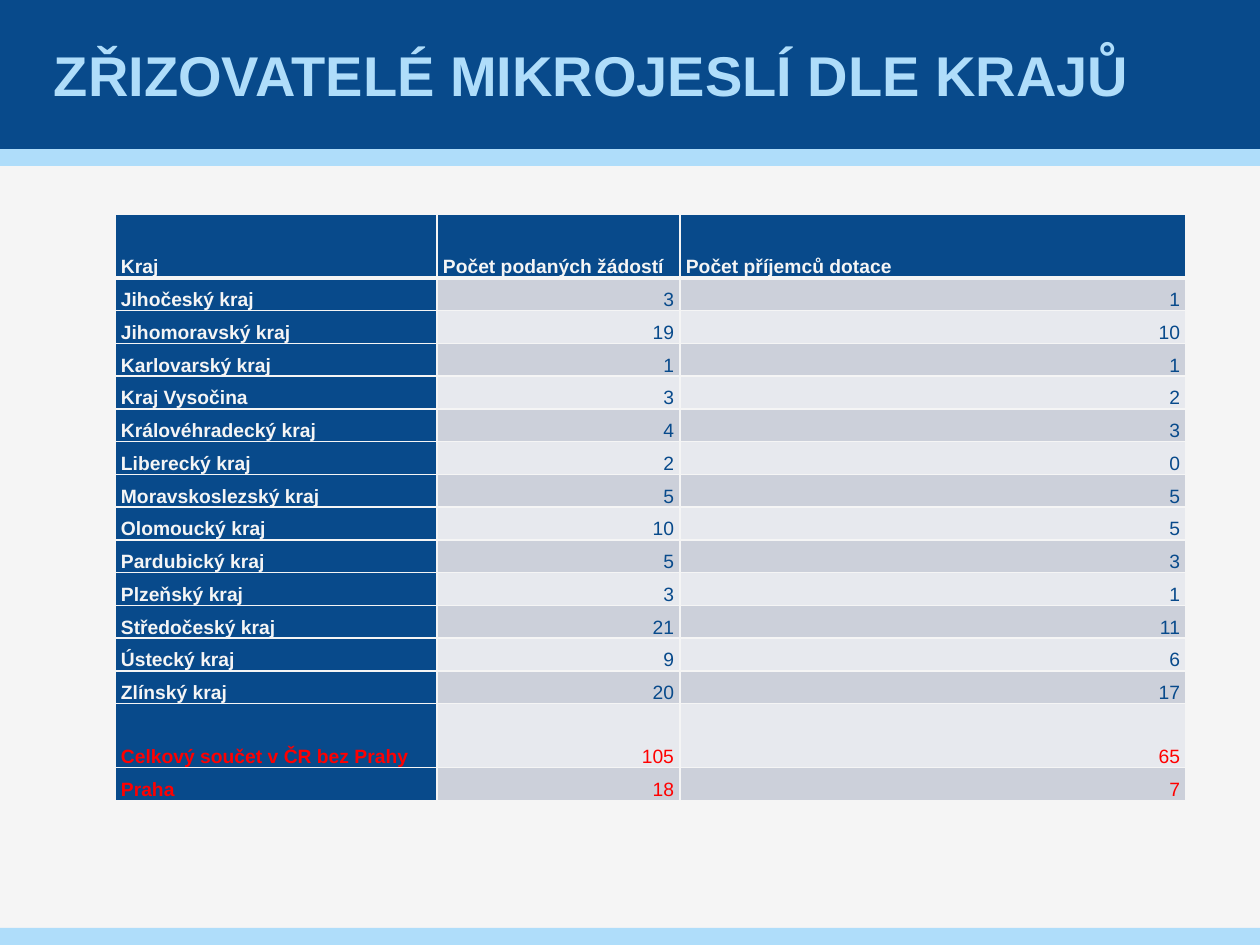
from lxml.etree import SubElement
from pptx import Presentation
from pptx.dml.color import RGBColor
from pptx.enum.shapes import MSO_SHAPE
from pptx.enum.text import MSO_ANCHOR, PP_ALIGN
from pptx.oxml.ns import qn
from pptx.util import Pt

COLORS = {
    "navy": "084A8B",
    "sky": "AFDDFA",
    "paper": "F5F5F5",
    "dark_band": "CCD0DA",
    "light_band": "E7E9EE",
    "total": "FF0000",
}
FONT = "Arial"
EMU_PER_PX = 914400 / 126

HEADINGS = ("Kraj", "Počet podaných žádostí", "Počet příjemců dotace")
REGIONS = [
    ("Jihočeský kraj", 3, 1),
    ("Jihomoravský kraj", 19, 10),
    ("Karlovarský kraj", 1, 1),
    ("Kraj Vysočina", 3, 2),
    ("Královéhradecký kraj", 4, 3),
    ("Liberecký kraj", 2, 0),
    ("Moravskoslezský kraj", 5, 5),
    ("Olomoucký kraj", 10, 5),
    ("Pardubický kraj", 5, 3),
    ("Plzeňský kraj", 3, 1),
    ("Středočeský kraj", 21, 11),
    ("Ústecký kraj", 9, 6),
    ("Zlínský kraj", 20, 17),
]
TOTALS = [("Celkový součet v ČR bez Prahy", 105, 65), ("Praha", 18, 7)]
COLUMN_WIDTHS = (322, 243, 506)
TALL_ROW = 64


def px(length):
    """Turn a length in px into EMU."""
    return round(length * EMU_PER_PX)


def color(name):
    """Return the named colour."""
    return RGBColor.from_string(COLORS[name])


def style_text(para, size, color_name, bold):
    """Format every run of a paragraph."""
    for span in para.runs:
        span.font.name = FONT
        span.font.size = Pt(size)
        span.font.bold = bold
        span.font.color.rgb = color(color_name)


def add_band(page, box, color_name):
    """Draw a plain filled band."""
    band = page.shapes.add_shape(MSO_SHAPE.RECTANGLE, *map(px, box))
    band.shadow.inherit = False
    band.fill.solid()
    band.fill.fore_color.rgb = color(color_name)
    band.line.fill.background()


def add_header(page, box, title):
    """Draw the title band with its stripe along the bottom."""
    left, top, width, height = box
    stripe = 17
    band_height = height - stripe
    add_band(page, (left, top + band_height, width, stripe), "sky")
    add_band(page, (left, top, width, band_height), "navy")
    title_box = page.shapes.add_textbox(px(left + 49), px(top), px(1160), px(band_height))
    frame = title_box.text_frame
    frame.word_wrap = True
    frame.vertical_anchor = MSO_ANCHOR.MIDDLE
    frame.margin_left = frame.margin_right = px(5)
    frame.margin_top = frame.margin_bottom = 0
    frame.text = title
    style_text(frame.paragraphs[0], 32, "sky", True)


def add_borders(cell, top_width, bottom_width):
    """Give a cell its four border lines."""
    properties = cell._tc.get_or_add_tcPr()
    widths = {"a:lnL": 1, "a:lnR": 1, "a:lnT": top_width, "a:lnB": bottom_width}
    for tag, width in widths.items():
        line = SubElement(properties, qn(tag), w=str(Pt(width)))
        fill = SubElement(line, qn("a:solidFill"))
        SubElement(fill, qn("a:srgbClr"), val=COLORS["paper"])


def fill_cell(cell, value, row, column, is_total):
    """Write and format one table cell by its place in the grid."""
    is_label = row == 0 or column == 0
    add_borders(cell, 3 if row == 1 else 1, 3 if row == 0 else 1)
    band = "dark_band" if row % 2 else "light_band"
    cell.fill.solid()
    cell.fill.fore_color.rgb = color("navy" if is_label else band)
    cell.vertical_anchor = MSO_ANCHOR.BOTTOM
    cell.margin_left = cell.margin_right = px(6)
    cell.margin_top = cell.margin_bottom = 0
    cell.text_frame.text = str(value)
    para = cell.text_frame.paragraphs[0]
    para.line_spacing = 1.15
    para.alignment = PP_ALIGN.LEFT if is_label else PP_ALIGN.RIGHT
    text_color = "total" if is_total else "paper" if is_label else "navy"
    style_text(para, 11, text_color, is_label)


def add_region_table(page, box):
    """Build the table of applications and grants by region."""
    rows = [HEADINGS, *REGIONS, *TOTALS]
    first_total = len(rows) - len(TOTALS)
    tall_rows = (0, first_total)
    short_row = (box[3] - TALL_ROW * len(tall_rows)) / (len(rows) - len(tall_rows))
    table = page.shapes.add_table(len(rows), len(HEADINGS), *map(px, box)).table
    for column, width in zip(table.columns, COLUMN_WIDTHS):
        column.width = px(width)
    for row, values in enumerate(rows):
        table.rows[row].height = px(TALL_ROW if row in tall_rows else short_row)
        for column, value in enumerate(values):
            fill_cell(table.cell(row, column), value, row, column, row >= first_total)


def main():
    """Build and save the deck."""
    deck = Presentation()
    deck.slide_width, deck.slide_height = px(1260), px(945)
    page = deck.slides.add_slide(deck.slide_layouts[6])
    page.background.fill.solid()
    page.background.fill.fore_color.rgb = color("paper")
    add_header(page, (0, 0, 1260, 166), "ZŘIZOVATELÉ MIKROJESLÍ DLE KRAJŮ")
    add_band(page, (0, 928, 1260, 17), "sky")
    add_region_table(page, (115, 214, sum(COLUMN_WIDTHS), 587))
    deck.save("out.pptx")


if __name__ == "__main__":
    main()
